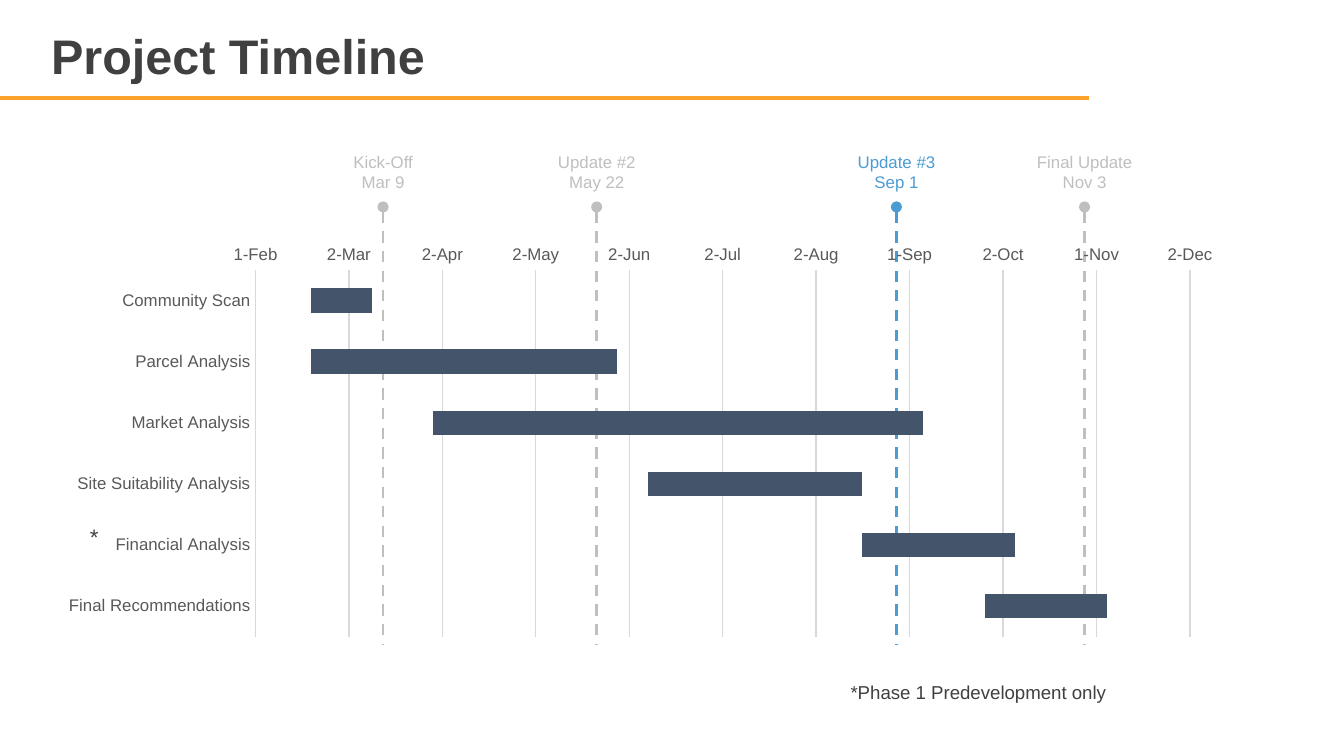
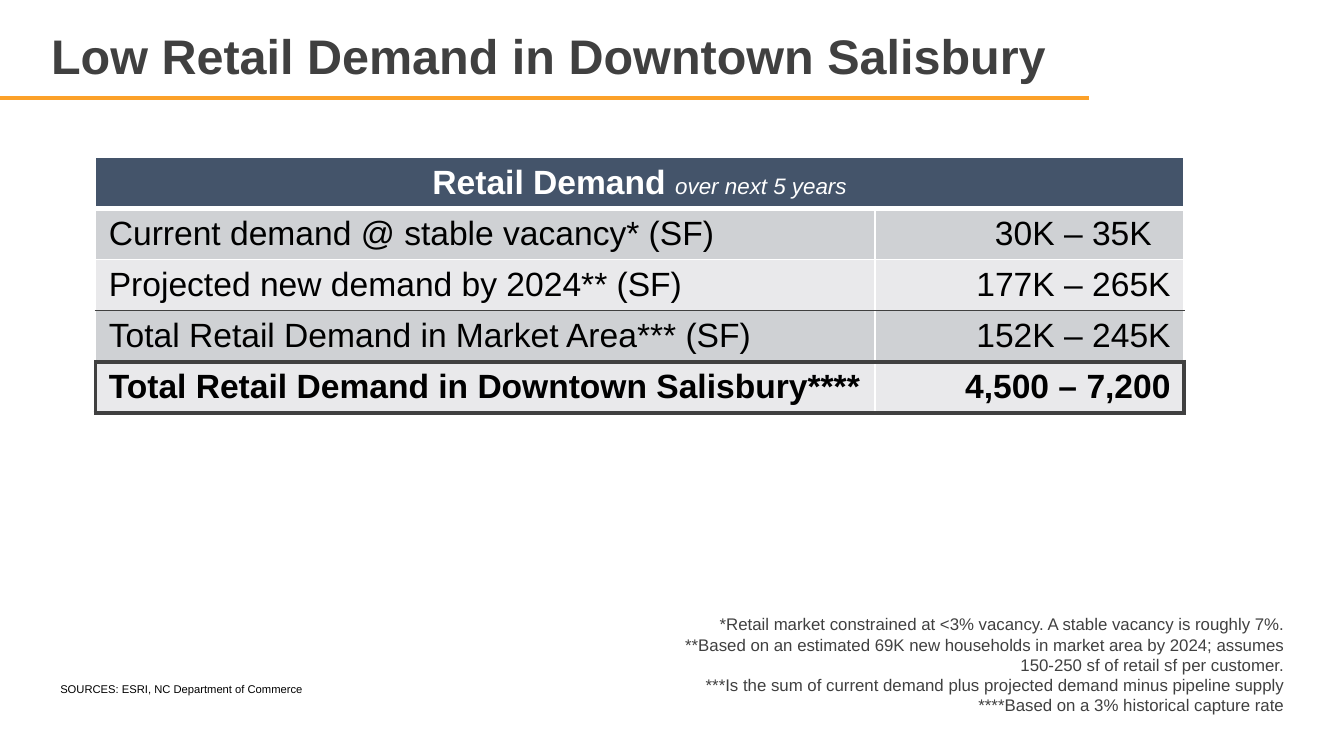
from lxml import etree
from pptx import Presentation
from pptx.chart.data import CategoryChartData
from pptx.dml.color import RGBColor
from pptx.enum import chart as charts, dml, shapes, text
from pptx.oxml import ns
from pptx.util import Inches, Pt

COLORS = {
    "orange": "FCA129", "ink": "404040", "muted": "BFBFBF", "blue": "4B9CD3",
    "navy": "44546A", "axis": "595959", "grid": "D9D9D9", "white": "FFFFFF",
    "black": "000000", "band": "CFD1D4", "light": "E9E9EB",
}
FONT = "Arial"
LEFT, CENTER, RIGHT = text.PP_ALIGN.LEFT, text.PP_ALIGN.CENTER, text.PP_ALIGN.RIGHT

TASKS = [
    ("Community Scan", 43880, 20),
    ("Parcel Analysis", 43880, 100),
    ("Market Analysis", 43920, 160),
    ("Site Suitability Analysis", 43990, 70),
    ("Financial Analysis", 44060, 50),
    ("Final Recommendations", 44100, 40),
]
MILESTONES = [
    ("Update #2", "May 22", 4.44, 0.78, "muted"),
    ("Kick-Off", "Mar 9", 2.85, 0.65, "muted"),
    ("Update #3", "Sep 1", 6.67, 0.78, "blue"),
    ("Final Update", "Nov 3", 8.07, 0.92, "muted"),
]
DEMAND = [
    ("Current demand @ stable vacancy* (SF)", "30K – 35K"),
    ("Projected new demand by 2024** (SF)", "177K – 265K"),
    ("Total Retail Demand in Market Area*** (SF)", "152K – 245K"),
    ("Total Retail Demand in Downtown Salisbury****", "4,500 – 7,200"),
]
FOOTNOTES = [
    "*Retail market constrained at <3% vacancy. A stable vacancy is roughly 7%.",
    "**Based on an estimated 69K new households in market area by 2024; "
    "assumes 150-250 sf of retail sf per customer.",
    "***Is the sum of current demand plus projected demand minus pipeline supply\v"
    "****Based on a 3% historical capture rate",
]


def rgb(name):
    """Return the named colour."""
    return RGBColor.from_string(COLORS[name])


def inches(box):
    """Convert a left, top, width, height box to lengths."""
    return [Inches(value) for value in box]


def style_font(font, size, color, bold=False, italic=False):
    """Apply the deck font with a size, colour and weight."""
    font.name, font.size, font.bold, font.italic = FONT, Pt(size), bold, italic
    font.color.rgb = rgb(color)


def add_text(page, box, lines, size, color="ink", align=LEFT, wrap=False):
    """Add a text box with one paragraph per line."""
    frame = page.shapes.add_textbox(*inches(box)).text_frame
    frame.word_wrap = wrap
    frame.auto_size = text.MSO_AUTO_SIZE.SHAPE_TO_FIT_TEXT
    frame.text = "\n".join(lines)
    for paragraph in frame.paragraphs:
        paragraph.alignment = align
        for span in paragraph.runs:
            style_font(span.font, size, color)
        for line_break in paragraph._p.findall(ns.qn("a:br")):
            etree.SubElement(line_break, ns.qn("a:rPr"), sz=str(size * 100))


def add_line(page, start, end, color, width):
    """Draw a straight line without a shadow."""
    line = page.shapes.add_connector(
        shapes.MSO_CONNECTOR.STRAIGHT, *inches(start + end))
    line.line.color.rgb = rgb(color)
    line.line.width = Pt(width)
    etree.SubElement(line._element.spPr, ns.qn("a:effectLst"))
    return line


def add_page(deck, title, width):
    """Start a slide with the shared title and orange rule."""
    page = deck.slides.add_slide(deck.slide_layouts[5])
    add_line(page, (0, 0.73), (8.1, 0.73), "orange", 2)
    holder = page.shapes.title
    holder.left, holder.top, holder.width, holder.height = inches((0.28, 0.15, width, 0.57))
    frame = holder.text_frame
    frame.text = title
    frame.auto_size = text.MSO_AUTO_SIZE.NONE
    frame.vertical_anchor = text.MSO_ANCHOR.MIDDLE
    frame.paragraphs[0].alignment = LEFT
    frame.paragraphs[0].line_spacing = 0.9
    style_font(frame.paragraphs[0].runs[0].font, 26, "ink", bold=True)
    return page


def add_milestone(page, box, lines, color):
    """Place a milestone label above its dashed marker line."""
    left, top, width, height = box
    center = left + width / 2
    marker = add_line(page, (center, top + 0.46), (center, top + height), color, 1.5)
    marker.line.dash_style = dml.MSO_LINE.DASH
    etree.SubElement(marker.line._get_or_add_ln(), ns.qn("a:headEnd"), type="oval")
    add_text(page, (left, top, width, 0.4), lines, 9, color, CENTER)


def clear_background(chart):
    """Make the chart and plot areas transparent and fix the plot position."""
    area = chart._chartSpace.chart
    plot = area.plotArea
    for old in plot.findall(ns.qn("c:layout")):
        plot.remove(old)
    layout = etree.Element(ns.qn("c:layout"))
    manual = etree.SubElement(layout, ns.qn("c:manualLayout"))
    settings = [("layoutTarget", "inner"), ("xMode", "edge"), ("yMode", "edge"),
                ("x", "0.168"), ("y", "0.082"), ("w", "0.812"), ("h", "0.898")]
    for tag, value in settings:
        etree.SubElement(manual, ns.qn("c:" + tag), val=value)
    plot.insert(0, layout)
    for place in (plot.append, area.addnext):
        properties = etree.Element(ns.qn("c:spPr"))
        etree.SubElement(properties, ns.qn("a:noFill"))
        border = etree.SubElement(properties, ns.qn("a:ln"))
        etree.SubElement(border, ns.qn("a:noFill"))
        place(properties)


def add_gantt(page, box):
    """Draw the tasks as bars floating on hidden start offsets."""
    names, starts, lengths = zip(*TASKS)
    data = CategoryChartData()
    data.categories = names
    data.add_series("Series 1", starts)
    data.add_series("Series 2", lengths)
    chart = page.shapes.add_chart(
        charts.XL_CHART_TYPE.BAR_STACKED, *inches(box), data).chart
    chart.has_legend = chart.has_title = False
    style_font(chart.font, 10, "black")
    clear_background(chart)

    plot = chart.plots[0]
    plot.gap_width, plot.overlap, plot.vary_by_categories = 150, 100, False
    offsets, bars = plot.series
    offsets.format.fill.background()
    bars.format.fill.solid()
    bars.format.fill.fore_color.rgb = rgb("navy")

    tasks, dates = chart.category_axis, chart.value_axis
    for axis in (tasks, dates):
        axis.major_tick_mark = axis.minor_tick_mark = charts.XL_TICK_MARK.NONE
        style_font(axis.tick_labels.font, 9, "axis")
    tasks.reverse_order = True
    dates.minimum_scale, dates.maximum_scale, dates.major_unit = 43862, 44195, 30.5
    dates.tick_labels.number_format = r"[$-409]d\-mmm;@"
    dates.tick_labels.number_format_is_linked = False
    dates.format.line.fill.background()
    for line in (tasks.format.line, dates.major_gridlines.format.line):
        line.color.rgb = rgb("grid")
        line.width = Pt(0.75)


def style_cell(cell, fill, borders):
    """Fill a cell and draw its left, right, top and bottom borders."""
    cell.fill.solid()
    cell.fill.fore_color.rgb = rgb(fill)
    properties = cell._tc.get_or_add_tcPr()
    for index, (side, (color, width)) in enumerate(zip("LRTB", borders)):
        line = etree.Element(ns.qn("a:ln" + side), w=str(Pt(width)))
        solid = etree.SubElement(line, ns.qn("a:solidFill"))
        etree.SubElement(solid, ns.qn("a:srgbClr"), val=COLORS[color])
        properties.insert(index, line)


def add_demand_table(page, box):
    """Build the demand table with a merged header and an outlined total."""
    table = page.shapes.add_table(len(DEMAND) + 1, 2, *inches(box)).table
    table.first_row = table.horz_banding = False
    for column, width in zip(table.columns, (5.8, 2.3)):
        column.width = Inches(width)
    for row, height in zip(table.rows, (0.36, 0.36, 0.33, 0.33, 0.33)):
        row.height = Inches(height)

    thin, outline = ("white", 1), ("ink", 2.25)
    edges = [thin, ("white", 3), thin, ("ink", 0.5), outline, outline]
    fills = ["navy", "band", "light", "band", "light"]
    last = len(DEMAND)
    for row, fill in enumerate(fills):
        side = outline if row == last else thin
        for column, sides in enumerate([(side, thin), (thin, side)]):
            style_cell(table.cell(row, column), fill, (*sides, edges[row], edges[row + 1]))

    header = table.cell(0, 0)
    header.merge(table.cell(0, 1))
    header.vertical_anchor = text.MSO_ANCHOR.MIDDLE
    paragraph = header.text_frame.paragraphs[0]
    paragraph.alignment = CENTER
    for words, size, main in [("Retail Demand ", 18, True), ("over next 5 years", 12, False)]:
        span = paragraph.add_run()
        span.text = words
        style_font(span.font, size, "white", bold=main, italic=not main)

    for row, values in enumerate(DEMAND, 1):
        for column, (value, align) in enumerate(zip(values, (LEFT, RIGHT))):
            paragraph = table.cell(row, column).text_frame.paragraphs[0]
            paragraph.text = value
            paragraph.alignment = align
            style_font(paragraph.runs[0].font, 18, "black", bold=row == last)
    table.cell(1, 1).margin_right = Inches(0.24)


def add_timeline_page(deck):
    """Build the project timeline slide."""
    page = add_page(deck, "Project Timeline", 7.82)
    for name, date, center, width, color in MILESTONES:
        add_milestone(page, (center - width / 2, 1.08, width, 3.72), (name, date), color)
    add_gantt(page, (0.33, 1.76, 9.35, 3.04))
    add_text(page, (6.23, 5.02, 2.11, 0.27), ["*Phase 1 Predevelopment only"], 10)
    add_text(page, (0.57, 3.84, 0.27, 0.3), ["*"], 12)


def add_demand_page(deck):
    """Build the retail demand slide."""
    page = add_page(deck, "Low Retail Demand in Downtown Salisbury", 8.96)
    add_demand_table(page, (0.71, 1.17, 8.1, 2))
    add_text(page, (4.94, 4.52, 4.71, 0.86), FOOTNOTES, 9, align=RIGHT, wrap=True)
    add_text(page, (0.35, 5.03, 2.82, 0.2),
             ["SOURCES: ESRI, NC Department of Commerce"], 6, "black", wrap=True)


def main():
    """Create and save the deck."""
    deck = Presentation()
    deck.slide_width = Inches(10)
    deck.slide_height = deck.slide_width * 9 // 16
    add_timeline_page(deck)
    add_demand_page(deck)
    deck.save("out.pptx")


if __name__ == "__main__":
    main()
